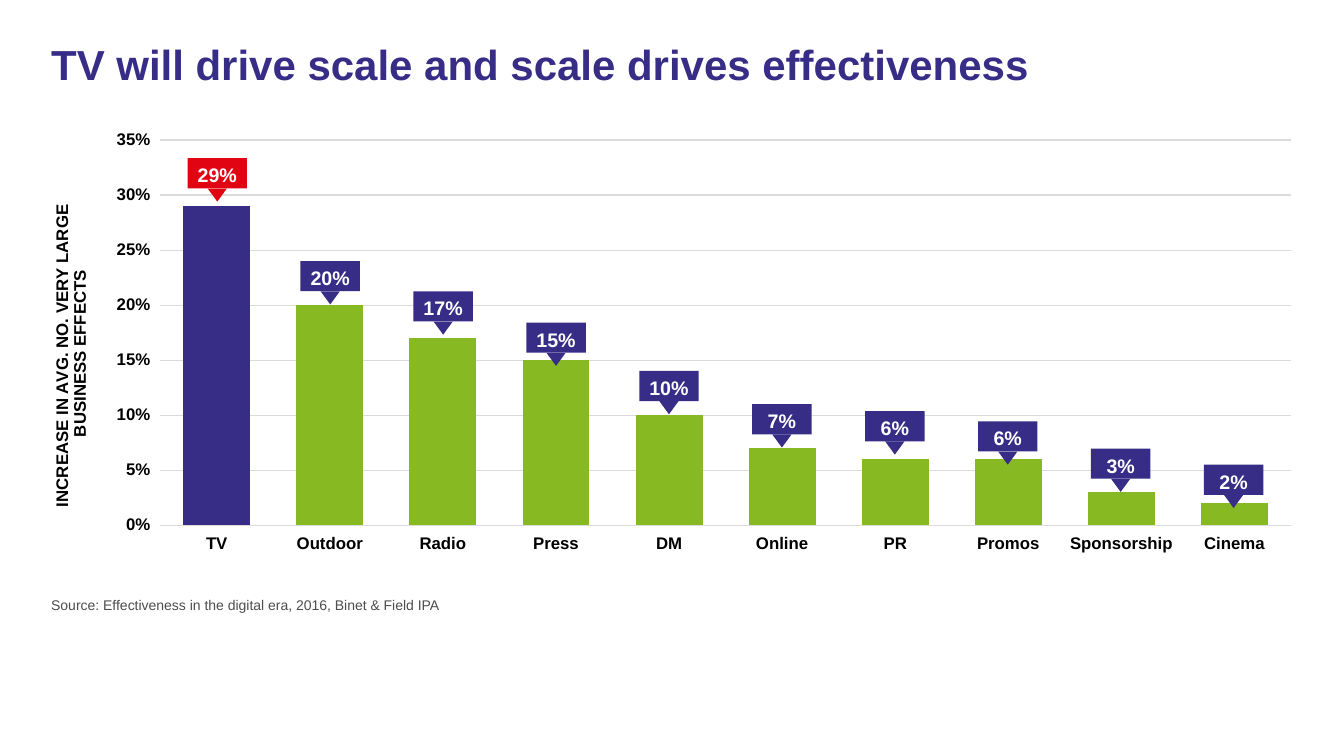
from dataclasses import dataclass

from pptx import Presentation
from pptx.chart.data import CategoryChartData as ChartData
from pptx.dml.color import RGBColor as RGB
from pptx.enum.chart import XL_CHART_TYPE as Kind
from pptx.enum.shapes import MSO_SHAPE as Shape
from pptx.enum.text import PP_ALIGN as Align
from pptx.oxml.ns import qn
from pptx.util import Inches, Pt


@dataclass(frozen=True)
class Theme:
    font: str = "Arial"
    blue: str = "372D87"
    green: str = "87B923"
    red: str = "E10514"
    grey: str = "4D4D4D"
    grid: str = "DBDBDB"
    black: str = "000000"
    white: str = "FFFFFF"
    title: int = 30
    label: int = 14
    axis: int = 12
    note: int = 10


MEDIA = [
    ("TV", 0.29, 1.57),
    ("Outdoor", 0.2, 2.59),
    ("Radio", 0.17, 2.89),
    ("Press", 0.15, 3.2),
    ("DM", 0.1, 3.68),
    ("Online", 0.07, 4.01),
    ("PR", 0.06, 4.08),
    ("Promos", 0.06, 4.18),
    ("Sponsorship", 0.03, 4.45),
    ("Cinema", 0.02, 4.61),
]
CHART = (0.23, 1.21, 12.58, 4.96)
PLOT = (1.59, 1.39, 11.22, 3.82)
NAME = (0.48, 2)


class Deck:
    def __init__(self, theme):
        self.theme = theme
        self.file = Presentation()
        self.file.slide_width = Inches(13.33)
        self.file.slide_height = Inches(7.5)
        self.slide = self.file.slides.add_slide(self.file.slide_layouts[6])

    def style(self, font, size, color, bold=True):
        font.name = self.theme.font
        font.size = Pt(size)
        font.bold = bold
        font.color.rgb = RGB.from_string(color)

    def fill(self, item, color):
        item.fill.solid()
        item.fill.fore_color.rgb = RGB.from_string(color)

    def text(self, box, words, size, color, bold=True, align=Align.LEFT, home=None):
        shapes = home or self.slide.shapes
        frame = shapes.add_textbox(*map(Inches, box)).text_frame
        frame.word_wrap = True
        frame.text = words
        para = frame.paragraphs[0]
        para.alignment = align
        self.style(para.runs[0].font, size, color, bold)
        return para

    def shape(self, home, kind, box, color):
        item = home.add_shape(kind, *map(Inches, box))
        item.shadow.inherit = False
        item.line.fill.background()
        self.fill(item, color)
        return item

    def callout(self, left, top, words, color):
        home = self.slide.shapes.add_group_shape().shapes
        self.shape(home, Shape.RECTANGLE, (left, top, 0.59, 0.3), color)
        tip = (left + 0.2, top + 0.3, 0.19, 0.13)
        self.shape(home, Shape.ISOSCELES_TRIANGLE, tip, color).rotation = 180
        self.text((left - 0.1, top, 0.79, 0.34), words, self.theme.label,
                  self.theme.white, align=Align.CENTER, home=home)

    def layout(self, node, index, frame, box, inner=False):
        for old in node.findall(qn("c:layout")):
            node.remove(old)
        outer = node.makeelement(qn("c:layout"), {})
        node.insert(index, outer)
        manual = outer.makeelement(qn("c:manualLayout"), {})
        outer.append(manual)
        left, top, width, height = frame
        pairs = [("layoutTarget", "inner")] if inner else []
        pairs += [("xMode", "edge"), ("yMode", "edge")]
        pairs += [("x", (box[0] - left) / width), ("y", (box[1] - top) / height)]
        if inner:
            pairs += [("w", box[2] / width), ("h", box[3] / height)]
        for name, value in pairs:
            manual.append(manual.makeelement(qn("c:" + name), {"val": str(value)}))

    def chart(self, box, plot, rows, name, spot):
        theme = self.theme
        data = ChartData()
        data.categories = [row[0] for row in rows]
        data.add_series("Series 1", [row[1] for row in rows])
        frame = self.slide.shapes.add_chart(
            Kind.COLUMN_CLUSTERED, *map(Inches, box), data)
        chart = frame.chart
        chart.has_legend = chart.has_title = False
        self.style(chart.font, theme.axis, theme.black)

        bars = chart.plots[0]
        bars.gap_width = 69
        bars.vary_by_categories = False
        series = bars.series[0]
        self.fill(series.format, theme.green)
        self.fill(series.points[0].format, theme.blue)

        for axis in (chart.category_axis, chart.value_axis):
            self.style(axis.tick_labels.font, theme.axis, theme.black)
            axis.format.line.fill.background()
        axis = chart.value_axis
        axis.minimum_scale, axis.maximum_scale, axis.major_unit = 0, 0.35, 0.05
        axis.tick_labels.number_format = "0%"
        axis.tick_labels.number_format_is_linked = False
        grid = axis.major_gridlines.format.line
        grid.width = Pt(0.75)
        grid.color.rgb = RGB.from_string(theme.grid)

        title = axis.axis_title
        title.text_frame.text = name
        for para in title.text_frame.paragraphs:
            para.alignment = Align.CENTER
            self.style(para.runs[0].font, theme.axis, theme.black)
        node = title._element
        body = node.find(".//" + qn("a:bodyPr"))
        body.set("rot", "-5400000")
        body.set("vert", "horz")
        self.layout(node, 1, box, spot)
        area = chart._chartSpace.find(".//" + qn("c:plotArea"))
        self.layout(area, 0, box, plot, inner=True)


def main():
    theme = Theme()
    deck = Deck(theme)
    deck.chart(CHART, PLOT, MEDIA,
               "INCREASE IN AVG. NO. VERY LARGE\n BUSINESS EFFECTS", NAME)
    head = deck.text((0.41, 0.39, 12.4, 1.12),
                     "TV will drive scale and scale drives effectiveness",
                     theme.title, theme.blue)
    head.line_spacing = 0.9
    deck.text((0.41, 5.87, 12.4, 0.33),
              "Source: Effectiveness in the digital era, 2016, Binet & Field IPA",
              theme.note, theme.grey, bold=False)

    for spot, (name, value, top) in enumerate(MEDIA):
        color = theme.red if name == "TV" else theme.blue
        deck.callout(1.86 + 1.12 * spot, top, f"{value:.0%}", color)
    deck.file.save("out.pptx")


if __name__ == "__main__":
    main()
